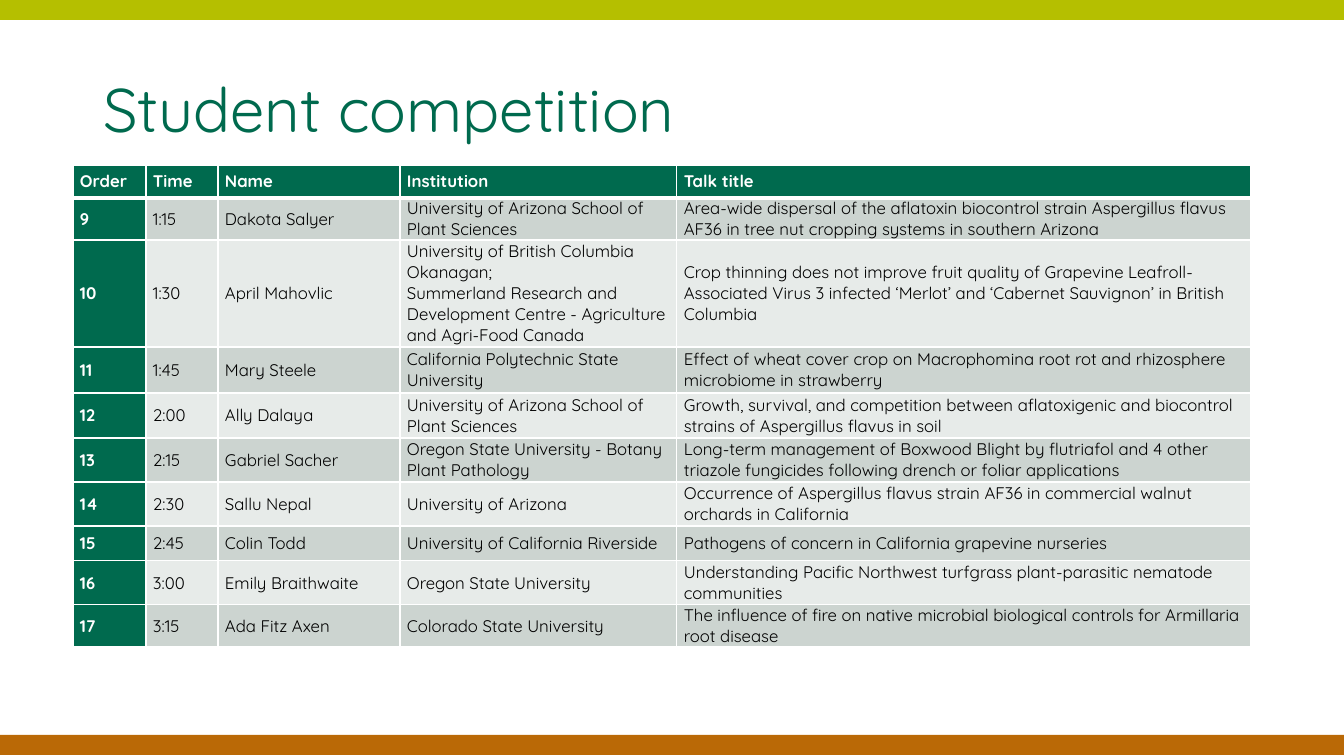
from copy import deepcopy

from lxml.etree import SubElement
from pptx import Presentation
from pptx.dml.color import RGBColor
from pptx.enum.shapes import MSO_SHAPE
from pptx.enum.text import MSO_ANCHOR, MSO_AUTO_SIZE, PP_ALIGN
from pptx.oxml.ns import qn
from pptx.util import Pt

LIME = RGBColor(0xB5, 0xBF, 0x00)
RUST = RGBColor(0xBA, 0x69, 0x06)
GREEN = RGBColor(0x00, 0x6A, 0x4E)
DARK = RGBColor(0xCC, 0xD4, 0xD0)
LIGHT = RGBColor(0xE7, 0xEB, 0xE9)
WHITE = RGBColor(0xFF, 0xFF, 0xFF)
BLACK = RGBColor(0x00, 0x00, 0x00)

WIDE, HIGH = 1344, 756
COLS = [73, 72, 182, 277, 574]
ROWS = [33, 42, 107, 46, 45, 44, 44, 35, 44, 41]
TALKS = [
    ("Order", "Time", "Name", "Institution", "Talk title"),
    ("9", "1:15", "Dakota Salyer", "University of Arizona School of Plant Sciences",
     "Area-wide dispersal of the aflatoxin biocontrol strain Aspergillus flavus "
     "AF36 in tree nut cropping systems in southern Arizona"),
    ("10", "1:30", "April Mahovlic",
     "University of British Columbia Okanagan;\nSummerland Research and "
     "Development Centre - Agriculture and Agri-Food Canada",
     "Crop thinning does not improve fruit quality of Grapevine Leafroll-Associated "
     "Virus 3 infected ‘Merlot’ and ‘Cabernet Sauvignon’ in British Columbia"),
    ("11", "1:45", "Mary Steele", "California Polytechnic State University",
     "Effect of wheat cover crop on Macrophomina root rot and rhizosphere "
     "microbiome in strawberry"),
    ("12", "2:00", "Ally Dalaya", "University of Arizona School of Plant Sciences",
     "Growth, survival, and competition between aflatoxigenic and biocontrol "
     "strains of Aspergillus flavus in soil"),
    ("13", "2:15", "Gabriel Sacher", "Oregon State University - Botany Plant Pathology",
     "Long-term management of Boxwood Blight by flutriafol and 4 other triazole "
     "fungicides following drench or foliar applications"),
    ("14", "2:30", "Sallu Nepal", "University of Arizona",
     "Occurrence of Aspergillus flavus strain AF36 in commercial walnut orchards "
     "in California"),
    ("15", "2:45", "Colin Todd", "University of California Riverside",
     "Pathogens of concern in California grapevine nurseries"),
    ("16", "3:00", "Emily Braithwaite", "Oregon State University",
     "Understanding Pacific Northwest turfgrass plant-parasitic nematode communities"),
    ("17", "3:15", "Ada Fitz Axen", "Colorado State University",
     "The influence of fire on native microbial biological controls for "
     "Armillaria root disease"),
]


def px(size):
    return round(size * 914400 / 100.8)


def apply(item, values):
    for name, value in values.items():
        setattr(item, name, value)


class Deck:
    face = "Quicksand"

    def __init__(self):
        self.show = Presentation()
        apply(self.show, {"slide_width": px(WIDE), "slide_height": px(HIGH)})
        self.slide = self.show.slides.add_slide(self.show.slide_layouts[5])

    def label(self, para, text, size, color, bold=False):
        para.text = text
        for run in para.runs:
            apply(run.font, {"name": self.face, "size": Pt(size), "bold": bold})
            run.font.color.rgb = color
        # Line breaks need the run's size too, or they stretch the line.
        for gap in para._p.findall(qn("a:br")):
            gap.append(deepcopy(para.runs[0]._r.rPr))

    def band(self, top, color):
        bar = self.slide.shapes.add_shape(
            MSO_SHAPE.RECTANGLE, 0, px(top), px(WIDE), px(20))
        bar.shadow.inherit = False
        bar.fill.solid()
        bar.fill.fore_color.rgb = color
        bar.line.fill.background()

    def title(self, text, left, top, width, height):
        head = self.slide.shapes.title
        apply(head, {"left": px(left), "top": px(top),
                     "width": px(width), "height": px(height)})
        apply(head.text_frame, {"vertical_anchor": MSO_ANCHOR.MIDDLE,
                                "word_wrap": True, "auto_size": MSO_AUTO_SIZE.NONE})
        para = head.text_frame.paragraphs[0]
        apply(para, {"alignment": PP_ALIGN.LEFT, "line_spacing": 0.9})
        self.label(para, text, 44, GREEN)

    def border(self, cell, widths):
        """Draw white cell edges, with widths in points keyed by side."""
        props = cell._tc.get_or_add_tcPr()
        for spot, (side, width) in enumerate(widths.items()):
            line = props.makeelement(qn(f"a:ln{side}"), {"w": str(Pt(width))})
            fill = SubElement(line, qn("a:solidFill"))
            SubElement(fill, qn("a:srgbClr"), val=str(WHITE))
            props.insert(spot, line)

    def cell(self, cell, text, row, col):
        key = row == 0 or col == 0
        apply(cell, {"margin_left": px(7), "margin_right": px(7), "margin_top": 0,
                     "margin_bottom": 0, "vertical_anchor": MSO_ANCHOR.MIDDLE})
        cell.fill.solid()
        cell.fill.fore_color.rgb = GREEN if key else DARK if row % 2 else LIGHT
        self.label(cell.text_frame.paragraphs[0], text, 12,
                   WHITE if key else BLACK, key)
        self.border(cell, {"L": 1, "R": 1, "T": 3 if row == 1 else 1,
                           "B": 3 if row == 0 else 1})

    def table(self, data, left, top, cols, rows):
        frame = self.slide.shapes.add_table(
            len(rows), len(cols), px(left), px(top), px(sum(cols)), px(sum(rows)))
        grid = frame.table
        apply(grid, {"first_row": True, "first_col": True, "horz_banding": True})
        for col, width in zip(grid.columns, cols):
            col.width = px(width)
        for row, height in zip(grid.rows, rows):
            row.height = px(height)
        for r, line in enumerate(data):
            for c, text in enumerate(line):
                self.cell(grid.cell(r, c), text, r, c)


def main():
    deck = Deck()
    deck.band(0, LIME)
    deck.band(735, RUST)
    deck.title("Student competition", 93, 40, 1159, 146)
    deck.table(TALKS, 73, 165, COLS, ROWS)
    deck.show.save("out.pptx")


if __name__ == "__main__":
    main()
